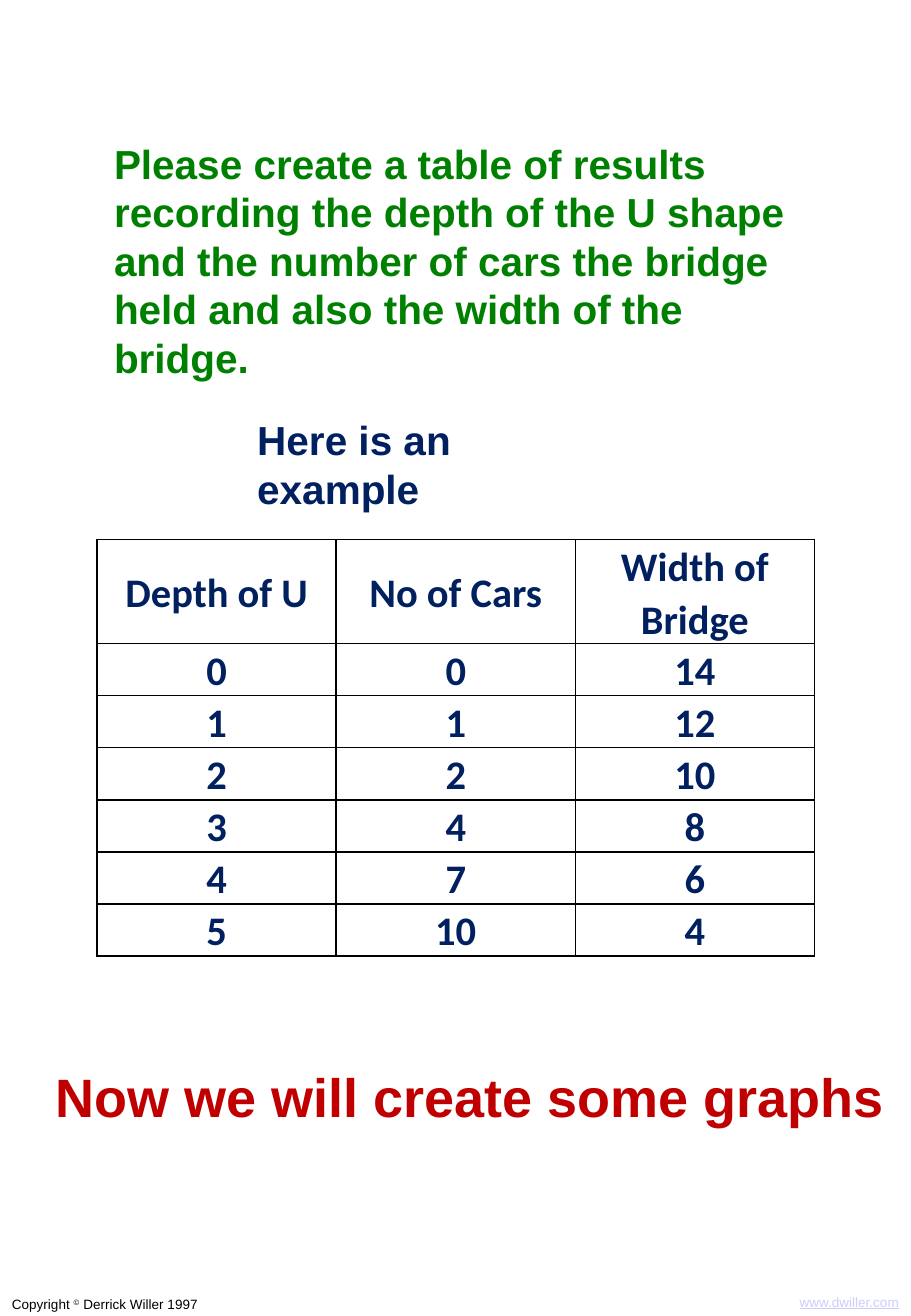
from lxml import etree
from pptx import Presentation
from pptx import util as u
from pptx.dml.color import RGBColor
from pptx.enum import text as t
from pptx.oxml.ns import qn

GREEN, NAVY, RED, BLACK, LILAC = "008000", "002060", "C00000", "000000", "CCCCFF"


def color(code):
    return RGBColor.from_string(code)


def write(par, words, size=24, font="Arial", fill=BLACK, bold=False,
          line=False, rise=0, align=t.PP_ALIGN.LEFT):
    """Add a formatted run to a paragraph."""
    run = par.add_run()
    run.text = words
    run.font.size = u.Pt(size)
    run.font.name = font
    run.font.bold = bold
    run.font.underline = line
    run.font.color.rgb = color(fill)
    if rise:
        run._r.get_or_add_rPr().set("baseline", str(rise * 1000))
    par.alignment = align


class Page:
    def __init__(self, wide, high):
        self.deck = Presentation()
        self.deck.slide_width = u.Cm(wide)
        self.deck.slide_height = u.Cm(high)
        self.slide = self.deck.slides.add_slide(self.deck.slide_layouts[5])

    def setup(self, shape, box, wrap=True):
        """Place a text shape and return its first paragraph."""
        shape.left, shape.top, shape.width, shape.height = map(u.Cm, box)
        frame = shape.text_frame
        frame.word_wrap = wrap
        frame.vertical_anchor = t.MSO_ANCHOR.TOP
        frame.auto_size = t.MSO_AUTO_SIZE.SHAPE_TO_FIT_TEXT
        return frame.paragraphs[0]

    def title(self, words, box, **style):
        write(self.setup(self.slide.shapes.title, box), words, **style)

    def label(self, parts, box, wrap=True, **style):
        """Add a text box from (words, extra format) pairs."""
        shape = self.slide.shapes.add_textbox(*map(u.Cm, box))
        par = self.setup(shape, box, wrap)
        for words, extra in parts:
            write(par, words, **{**style, **extra})

    def border(self, cell):
        props = cell._tc.get_or_add_tcPr()
        for spot, side in enumerate(("lnL", "lnR", "lnT", "lnB")):
            edge = etree.Element(qn("a:" + side), w=str(u.Pt(1)))
            fill = etree.SubElement(edge, qn("a:solidFill"))
            etree.SubElement(fill, qn("a:srgbClr"), val=BLACK)
            props.insert(spot, edge)

    def table(self, rows, box, head, **style):
        """Add a grid with a taller first row and equal rows below."""
        left, top, wide, high = box
        grid = self.slide.shapes.add_table(
            len(rows), len(rows[0]), *map(u.Cm, box)).table
        grid.first_row = grid.horz_banding = False
        step = (high - head) / (len(rows) - 1)
        for y, row in enumerate(rows):
            grid.rows[y].height = u.Cm(step if y else head)
            for x, words in enumerate(row):
                cell = grid.cell(y, x)
                cell.fill.background()
                self.border(cell)
                cell.margin_left = cell.margin_right = u.Cm(0.18)
                cell.margin_top = cell.margin_bottom = 0
                if y == 0:
                    cell.vertical_anchor = t.MSO_ANCHOR.MIDDLE
                par = cell.text_frame.paragraphs[0]
                par.line_spacing = 1.07
                par.space_after = u.Pt(8)
                write(par, str(words), align=t.PP_ALIGN.CENTER, **style)


def main():
    page = Page(19.05, 27.51)

    # Task and example heading
    page.title("Please create a table of results recording the depth of the "
               "U shape and the number of cars the bridge held and also the "
               "width of the bridge.",
               (2.13, 2.77, 15.01, 5.38), fill=GREEN, bold=True)
    page.label([("Here is an example", {})], (5.13, 8.56, 7.59, 2.31),
               fill=NAVY, bold=True)

    # Results
    results = [("Depth of U", "No of Cars", "Width of Bridge"),
               (0, 0, 14), (1, 1, 12), (2, 2, 10),
               (3, 4, 8), (4, 7, 6), (5, 10, 4)]
    page.table(results, (2.03, 11.28, 15, 8.69), head=2.16,
               font="Calibri", fill=NAVY, bold=True)

    # Next step
    page.label([("Now we will create some graphs", {})],
               (0.91, 22.1, 17.98, 1.63), wrap=False,
               size=32, fill=RED, bold=True)

    # Footer
    page.label([("Copyright ", {}), ("©", {"rise": 30}),
                (" Derrick Willer 1997", {})],
               (0, 26.97, 14.35, 0.61), size=8)
    page.label([("www.dwiller.com", {})], (15.65, 26.92, 3.4, 0.61),
               size=8, fill=LILAC, line=True, align=t.PP_ALIGN.RIGHT)

    page.deck.save("out.pptx")


if __name__ == "__main__":
    main()
